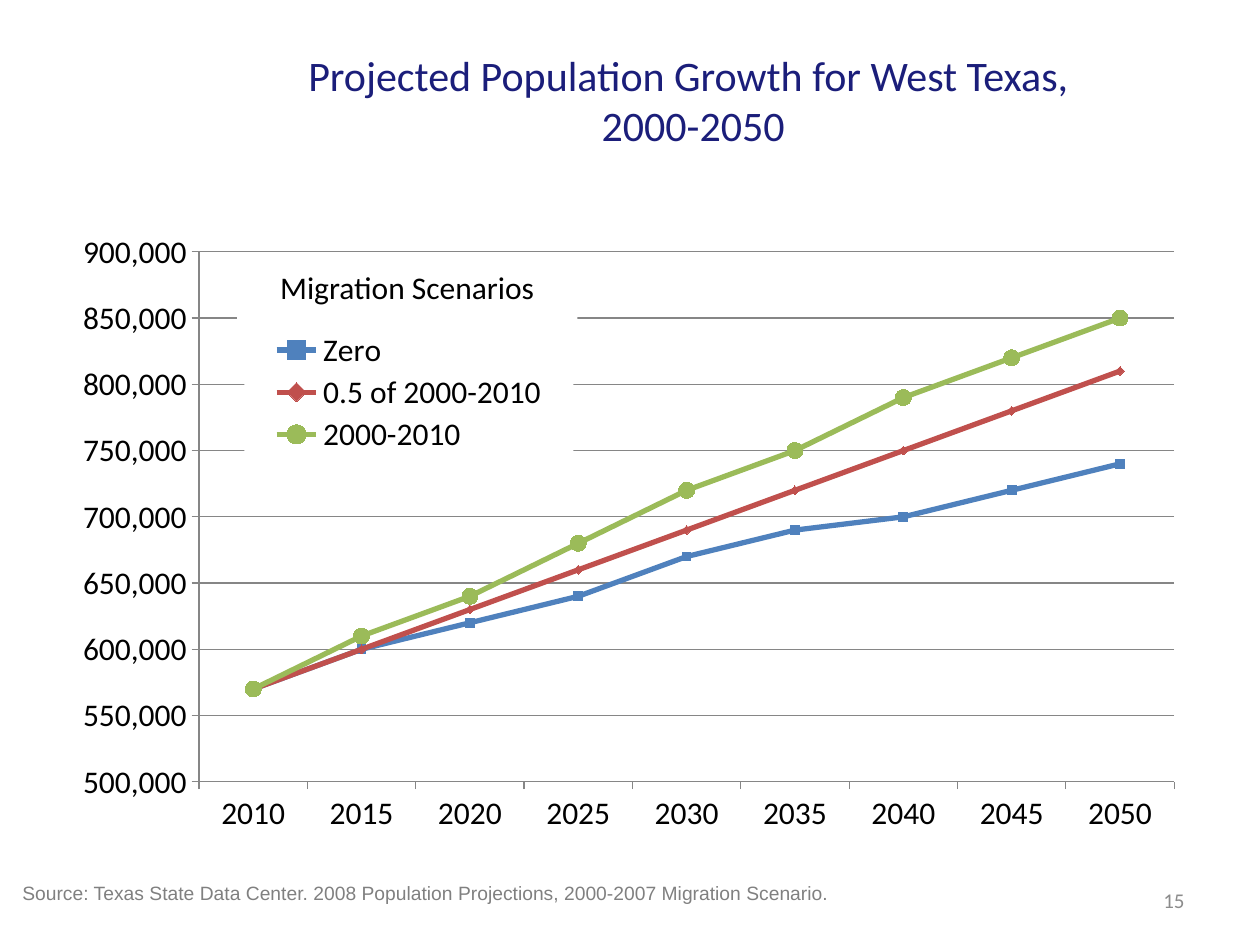
"""Build the West Texas population projection slide."""
from lxml import etree
from pptx import Presentation
from pptx.chart.data import CategoryChartData
from pptx.dml.color import RGBColor
from pptx.enum import chart as ch, shapes, text
from pptx.oxml.ns import qn
from pptx.util import Cm, Pt

NAVY = RGBColor(0x1B, 0x1E, 0x7A)
BLACK = RGBColor(0, 0, 0)
WHITE = RGBColor(255, 255, 255)
GREY = RGBColor(0x80, 0x80, 0x80)
NUMBER_GREY = RGBColor(0x8C, 0x8C, 0x8C)
AXIS_GREY = RGBColor(0x86, 0x86, 0x86)
BLUE = RGBColor(0x4F, 0x81, 0xBD)
RED = RGBColor(0xC0, 0x50, 0x4D)
GREEN = RGBColor(0x9B, 0xBB, 0x59)


def write(sp, words, size, color, align, anchor, font="Calibri", wrap=True):
    tf = sp.text_frame
    tf.word_wrap = wrap
    tf.vertical_anchor = anchor
    p = tf.paragraphs[0]
    p.text = words
    p.alignment = align
    p.font.name = font
    p.font.size = Pt(size)
    p.font.color.rgb = color
    return p


def set_layout(parent, index, target, x, y, w, h):
    old = parent.find(qn("c:layout"))
    if old is not None:
        parent.remove(old)
    layout = etree.Element(qn("c:layout"))
    manual = etree.SubElement(layout, qn("c:manualLayout"))
    values = [("xMode", "edge"), ("yMode", "edge"), ("x", x), ("y", y), ("w", w), ("h", h)]
    if target:
        values.insert(0, ("layoutTarget", target))
    for tag, value in values:
        etree.SubElement(manual, qn("c:" + tag)).set("val", str(value))
    parent.insert(index, layout)


prs = Presentation()
prs.slide_width, prs.slide_height = Cm(25.4), Cm(19.05)
s = prs.slides.add_slide(prs.slide_layouts[6])
align, anchor = text.PP_ALIGN, text.MSO_ANCHOR

sp = s.shapes.add_textbox(Cm(4.45), Cm(0.64), Cm(19.05), Cm(2.74))
write(sp, "Projected Population Growth for West Texas, \v2000-2050",
      24, NAVY, align.CENTER, anchor.MIDDLE)

sp = s.shapes.add_textbox(Cm(18.2), Cm(17.65), Cm(5.93), Cm(1.01))
write(sp, "15", 12, NUMBER_GREY, align.RIGHT, anchor.MIDDLE)

sp = s.shapes.add_textbox(Cm(0.2), Cm(17.65), Cm(24.33), Cm(0.74))
p = write(sp, "Source: Texas State Data Center. 2008 Population Projections, "
          "2000-2007 Migration Scenario.", 11, GREY, align.LEFT, anchor.TOP, "Arial")
pPr = p._p.get_or_add_pPr()
pPr.set("marL", str(Cm(2.2)))
pPr.set("indent", str(-Cm(2.2)))

marker = ch.XL_MARKER_STYLE
scenarios = [
    ("Zero", BLUE, marker.SQUARE, 5, [570, 600, 620, 640, 670, 690, 700, 720, 740]),
    ("0.5 of 2000-2010", RED, marker.DIAMOND, 5, [570, 600, 630, 660, 690, 720, 750, 780, 810]),
    ("2000-2010", GREEN, marker.CIRCLE, 9, [570, 610, 640, 680, 720, 750, 790, 820, 850]),
]
data = CategoryChartData(number_format="#,##0")
data.categories = [str(year) for year in range(2010, 2051, 5)]
for name, _, _, _, thousands in scenarios:
    data.add_series(name, [v * 1000 for v in thousands])
chart = s.shapes.add_chart(ch.XL_CHART_TYPE.LINE_MARKERS, Cm(1.27), Cm(4.45),
                           Cm(22.86), Cm(12.57), data).chart
chart.has_title = False
chart.font.name = "Calibri"
chart.font.size = Pt(18)
chart.font.color.rgb = BLACK
chart.plots[0].vary_by_categories = False

for ser, (_, color, style, size, _) in zip(chart.plots[0].series, scenarios):
    ser.smooth = False
    ser.format.line.color.rgb = color
    ser.format.line.width = Pt(3)
    ser.marker.style = style
    ser.marker.size = size
    ser.marker.format.fill.solid()
    ser.marker.format.fill.fore_color.rgb = color
    ser.marker.format.line.color.rgb = color

val = chart.value_axis
val.minimum_scale, val.maximum_scale, val.major_unit = 500000, 900000, 50000
val.has_major_gridlines = True
val.tick_labels.number_format = "#,##0"
val.tick_labels.number_format_is_linked = False
for axis in (val, chart.category_axis):
    axis.major_tick_mark = ch.XL_TICK_MARK.OUTSIDE
    axis.minor_tick_mark = ch.XL_TICK_MARK.NONE
for part in (val, chart.category_axis, val.major_gridlines):
    part.format.line.color.rgb = AXIS_GREY
    part.format.line.width = Pt(0.75)

chart.has_legend = True
legend = chart.legend
legend.position = ch.XL_LEGEND_POSITION.LEFT
legend.include_in_layout = True
legend.font.size = Pt(18)
legend.font.name = "Calibri"
legend.font.color.rgb = BLACK
set_layout(legend._element, 1, None, 0.16, 0.17, 0.29, 0.21)
spPr = etree.Element(qn("c:spPr"))
fill = etree.SubElement(spPr, qn("a:solidFill"))
etree.SubElement(fill, qn("a:srgbClr")).set("val", str(WHITE))
legend._element.find(qn("c:overlay")).addnext(spPr)
set_layout(chart._chartSpace.chart.plotArea, 0, "inner", 0.12, 0.05, 0.86, 0.85)

sp = s.shapes.add_shape(shapes.MSO_SHAPE.RECTANGLE, Cm(4.78), Cm(5.28), Cm(6.86), Cm(1.17))
sp.shadow.inherit = False
sp.fill.solid()
sp.fill.fore_color.rgb = WHITE
sp.line.fill.background()
write(sp, "Migration Scenarios", 18, BLACK, align.CENTER, anchor.TOP, wrap=False)

prs.save("out.pptx")
